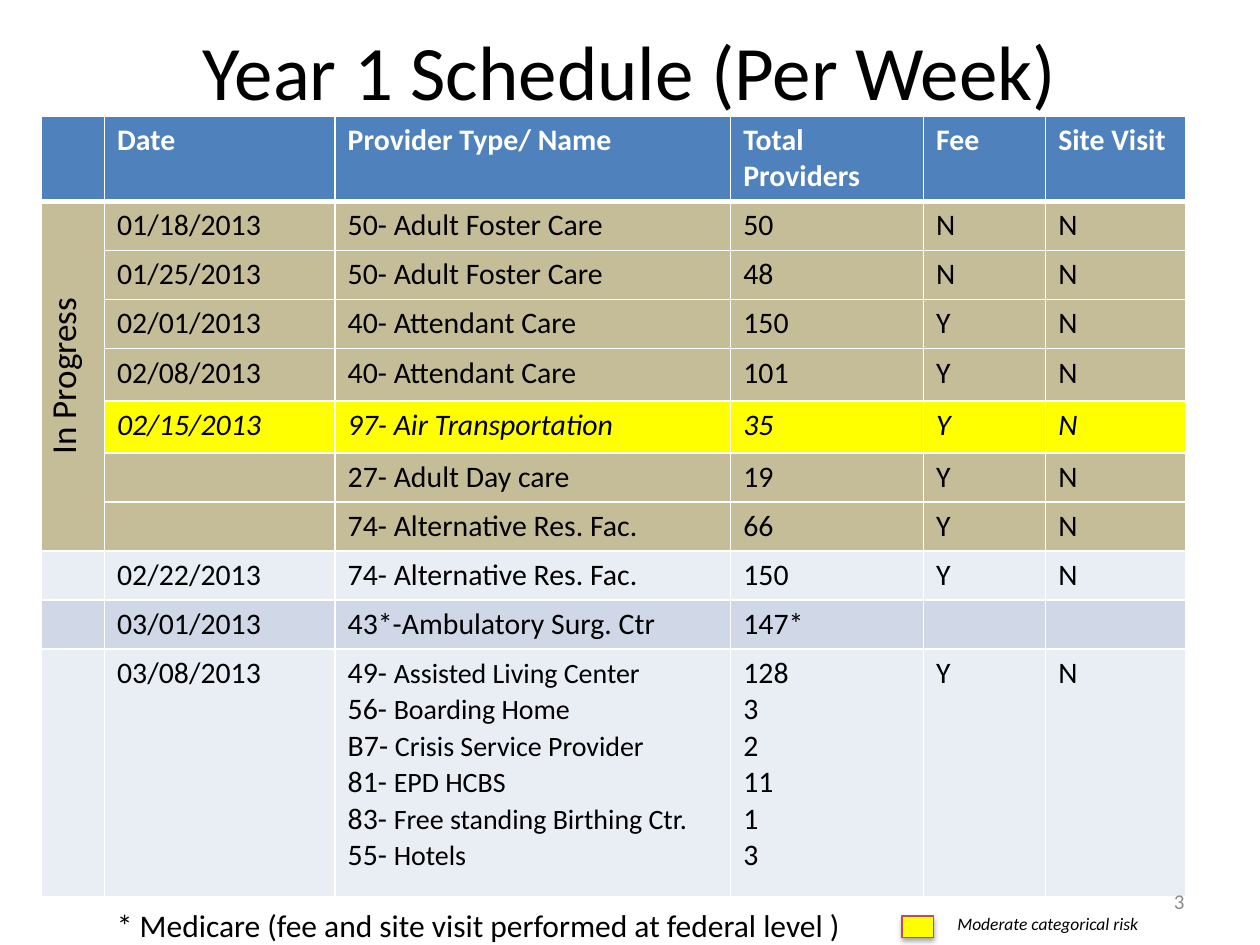
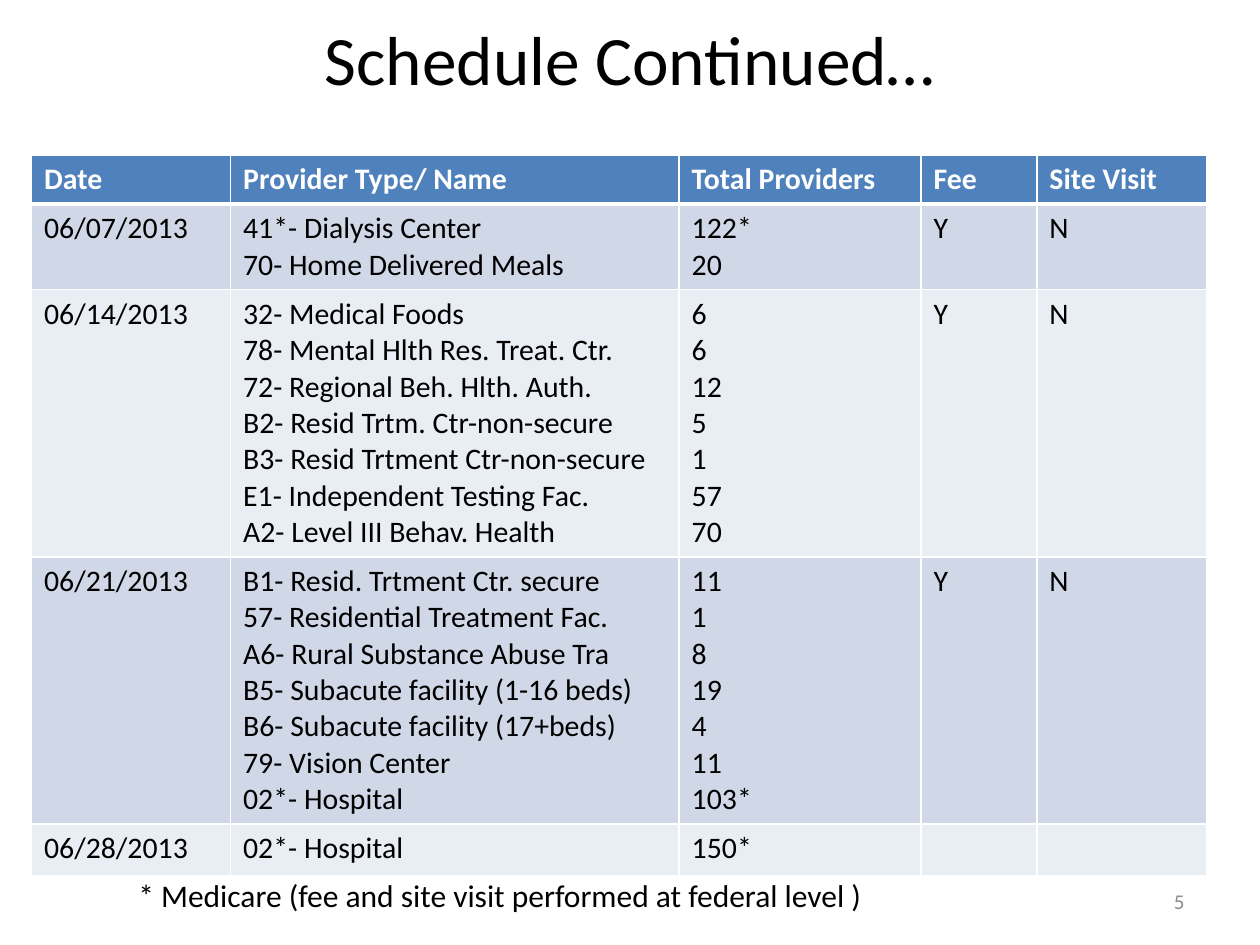
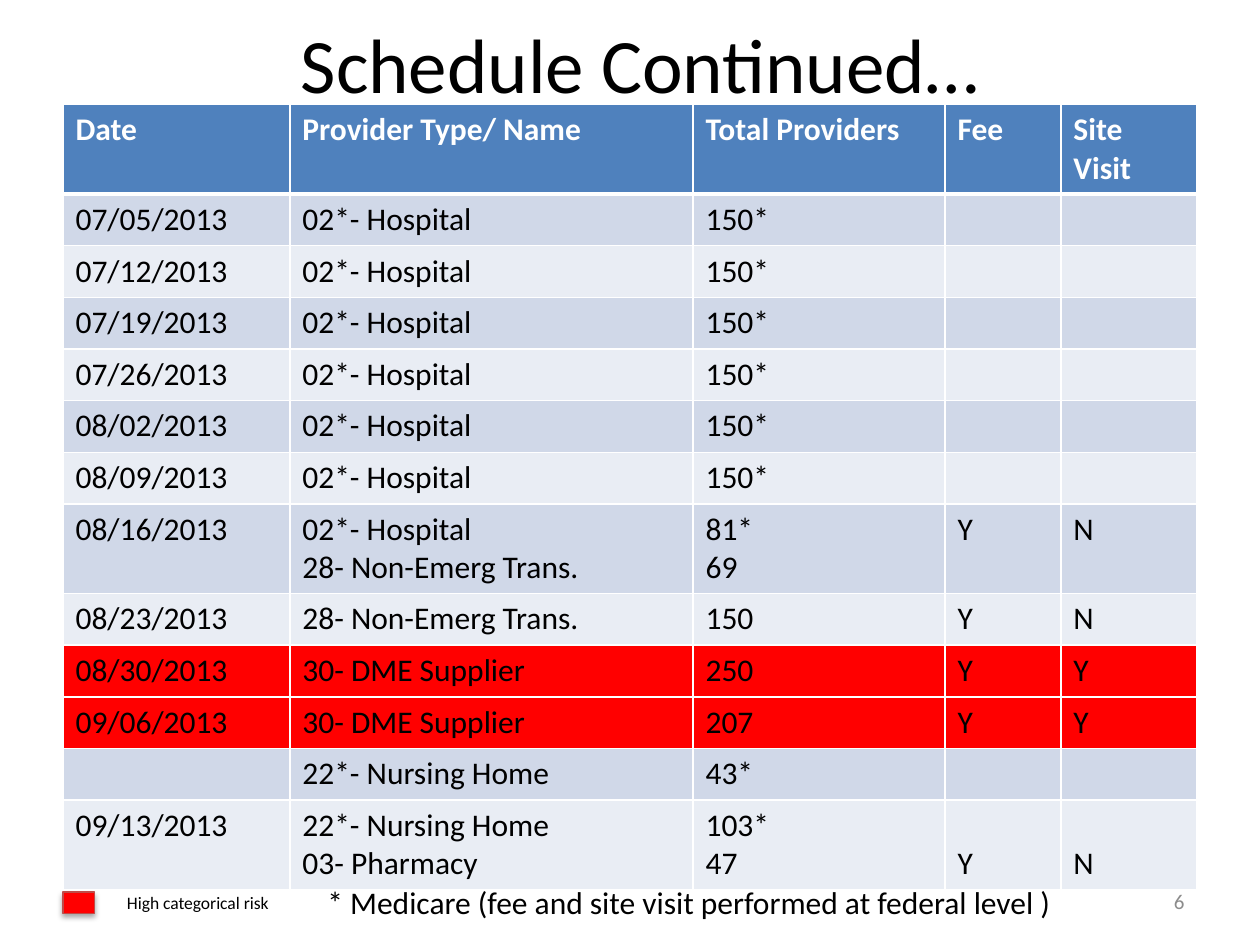
from dataclasses import dataclass
from typing import Any, Optional

from lxml import etree
from pptx import Presentation
from pptx.dml.color import RGBColor
from pptx.enum.shapes import MSO_SHAPE
from pptx.enum.text import MSO_ANCHOR, MSO_AUTO_SIZE, PP_ALIGN
from pptx.oxml.ns import qn
from pptx.util import Inches, Pt

RECTANGLE = MSO_SHAPE.RECTANGLE
TOP, MIDDLE, BOTTOM = MSO_ANCHOR.TOP, MSO_ANCHOR.MIDDLE, MSO_ANCHOR.BOTTOM
LEFT, CENTER, RIGHT = PP_ALIGN.LEFT, PP_ALIGN.CENTER, PP_ALIGN.RIGHT
NO_FIT, GROW = MSO_AUTO_SIZE.NONE, MSO_AUTO_SIZE.SHAPE_TO_FIT_TEXT

WHITE = RGBColor(0xFF, 0xFF, 0xFF)
BLACK = RGBColor(0x00, 0x00, 0x00)
GRAY = RGBColor(0x8C, 0x8C, 0x8C)
HEADER_BLUE = RGBColor(0x4F, 0x81, 0xBD)
BAND_DARK = RGBColor(0xD0, 0xD8, 0xE8)
BAND_LIGHT = RGBColor(0xE9, 0xED, 0xF4)
IN_PROGRESS_TAN = RGBColor(0xC4, 0xBD, 0x97)
MODERATE_YELLOW = RGBColor(0xFF, 0xFF, 0x00)
HIGH_RED = RGBColor(0xFF, 0x00, 0x00)
LEGEND_OUTLINE = RGBColor(0xBF, 0x4C, 0x48)

FONT = "Calibri"
TITLE_ONLY = 5
HEADINGS = ("Date", "Provider Type/ Name", "Total Providers", "Fee", "Site Visit")
FOOTNOTE = "* Medicare (fee and site visit performed at federal level )"
NUMBER_BOX = (7.17, 6.95, 2.33, 0.4)

Box = tuple[float, float, float, float]


@dataclass(frozen=True)
class Row:
    height: float
    date: str
    providers: str
    totals: str
    fee: str = ""
    visit: str = ""
    fill: Optional[RGBColor] = None
    italic: bool = False
    name_size: Optional[float] = None
    flags_anchor: Any = TOP


@dataclass(frozen=True)
class Legend:
    swatch: Box
    caption_box: Box
    caption: str
    color: RGBColor
    italic: bool = False


@dataclass(frozen=True)
class Schedule:
    title: str
    title_box: Box
    title_size: float
    left: float
    top: float
    columns: tuple[float, ...]
    header_height: float
    text_size: float
    rows: tuple[Row, ...]
    footnote_box: Box
    number: str
    legend: Optional[Legend] = None
    status: str = ""
    status_rows: int = 0


def hospital(date: str, total: str = "150*", height: float = 0.41) -> Row:
    return Row(height, date, "02*- Hospital", total)


SCHEDULES = (
    Schedule(
        title="Year 1 Schedule (Per Week)",
        title_box=(0.5, 0.08, 9, 0.95),
        title_size=44,
        left=0.33,
        top=0.92,
        columns=(0.5, 1.83, 3.14, 1.53, 0.97, 1.11),
        header_height=0.67,
        text_size=17,
        rows=(
            Row(0.38, "01/18/2013", "50- Adult Foster Care", "50", "N", "N", IN_PROGRESS_TAN),
            Row(0.38, "01/25/2013", "50- Adult Foster Care", "48", "N", "N", IN_PROGRESS_TAN),
            Row(0.38, "02/01/2013", "40- Attendant Care", "150", "Y", "N", IN_PROGRESS_TAN),
            Row(0.42, "02/08/2013", "40- Attendant Care", "101", "Y", "N", IN_PROGRESS_TAN),
            Row(0.41, "02/15/2013", "97- Air Transportation", "35", "Y", "N",
                MODERATE_YELLOW, italic=True),
            Row(0.38, "", "27- Adult Day care", "19", "Y", "N", IN_PROGRESS_TAN),
            Row(0.38, "", "74- Alternative Res. Fac.", "66", "Y", "N", IN_PROGRESS_TAN),
            Row(0.38, "02/22/2013", "74- Alternative Res. Fac.", "150", "Y", "N"),
            Row(0.38, "03/01/2013", "43*-Ambulatory Surg. Ctr", "147*"),
            Row(1.97, "03/08/2013",
                "49- Assisted Living Center\n56- Boarding Home\n"
                "B7- Crisis Service Provider\n81- EPD HCBS\n"
                "83- Free standing Birthing Ctr.\n55- Hotels",
                "128\n3\n2\n11\n1\n3", "Y", "N", name_size=16),
        ),
        footnote_box=(0.83, 7.14, 6.33, 0.4),
        number="3",
        legend=Legend((7.16, 7.27, 0.25, 0.17), (7.5, 7.2, 1.75, 0.27),
                      "Moderate categorical risk", MODERATE_YELLOW, italic=True),
        status="In Progress",
        status_rows=7,
    ),
    Schedule(
        title="Schedule Continued…",
        title_box=(0.5, 0.08, 9, 0.75),
        title_size=39.6,
        left=0.25,
        top=1.23,
        columns=(1.58, 3.56, 1.92, 0.92, 1.35),
        header_height=0.38,
        text_size=17,
        rows=(
            Row(0.68, "06/07/2013", "41*- Dialysis Center\n70- Home Delivered Meals",
                "122*\n20", "Y", "N"),
            Row(2.12, "06/14/2013",
                "32- Medical Foods\n78- Mental Hlth Res. Treat. Ctr.\n"
                "72- Regional Beh. Hlth. Auth.\nB2- Resid Trtm. Ctr-non-secure\n"
                "B3- Resid Trtment Ctr-non-secure\nE1- Independent Testing Fac.\n"
                "A2- Level III Behav. Health",
                "6\n6\n12\n5\n1\n57\n70", "Y", "N"),
            Row(2.12, "06/21/2013",
                "B1- Resid. Trtment Ctr. secure\n57- Residential Treatment Fac.\n"
                "A6- Rural Substance Abuse Tra\nB5- Subacute facility (1-16 beds)\n"
                "B6- Subacute facility (17+beds)\n79- Vision Center\n02*- Hospital",
                "11\n1\n8\n19\n4\n11\n103*", "Y", "N"),
            hospital("06/28/2013"),
        ),
        footnote_box=(1, 6.9, 6.83, 0.4),
        number="5",
    ),
    Schedule(
        title="Schedule Continued…",
        title_box=(0.58, 0, 9, 1),
        title_size=44,
        left=0.5,
        top=0.83,
        columns=(1.8, 3.2, 2, 0.92, 1.08),
        header_height=0.7,
        text_size=18,
        rows=(
            *(hospital(date) for date in ("07/05/2013", "07/12/2013", "07/19/2013",
                                          "07/26/2013", "08/02/2013", "08/09/2013")),
            Row(0.7, "08/16/2013", "02*- Hospital\n28- Non-Emerg Trans.",
                "81*\n69", "Y", "N"),
            Row(0.41, "08/23/2013", "28- Non-Emerg Trans.", "150", "Y", "N"),
            Row(0.41, "08/30/2013", "30- DME Supplier", "250", "Y", "Y", HIGH_RED),
            Row(0.41, "09/06/2013", "30- DME Supplier", "207", "Y", "Y", HIGH_RED),
            Row(0.41, "", "22*- Nursing Home", "43*"),
            Row(0.7, "09/13/2013", "22*- Nursing Home\n03- Pharmacy", "103*\n47",
                "Y", "N", flags_anchor=BOTTOM),
        ),
        footnote_box=(2.5, 6.96, 6.08, 0.4),
        number="6",
        legend=Legend((0.5, 7.08, 0.25, 0.17), (0.91, 7.03, 1.84, 0.27),
                      "High categorical risk", HIGH_RED),
    ),
)


def apply_format(target: Any, values: dict[str, Any]) -> None:
    for name, value in values.items():
        setattr(target, name, value)


def add_run(paragraph: Any, text: str, size: float, color: RGBColor,
            bold: bool = False, italic: bool = False) -> None:
    run = paragraph.add_run()
    run.text = text
    apply_format(run.font, {"name": FONT, "size": Pt(size), "bold": bold, "italic": italic})
    run.font.color.rgb = color


def add_label(slide: Any, box: Box, text: str, size: float, color: RGBColor = BLACK,
              italic: bool = False, align: Any = LEFT, anchor: Any = TOP,
              fit: Any = GROW) -> None:
    frame = slide.shapes.add_textbox(*map(Inches, box)).text_frame
    apply_format(frame, {"word_wrap": True, "auto_size": fit, "vertical_anchor": anchor})
    paragraph = frame.paragraphs[0]
    paragraph.alignment = align
    add_run(paragraph, text, size, color, italic=italic)


def set_title(slide: Any, schedule: Schedule) -> None:
    title = slide.shapes.title
    lengths = map(Inches, schedule.title_box)
    apply_format(title, dict(zip(("left", "top", "width", "height"), lengths)))
    apply_format(title.text_frame,
                 {"word_wrap": True, "auto_size": NO_FIT, "vertical_anchor": MIDDLE})
    paragraph = title.text_frame.paragraphs[0]
    paragraph.alignment = CENTER
    add_run(paragraph, schedule.title, schedule.title_size, BLACK)


def style_cell(cell: Any, fill: RGBColor, top: float = 1, bottom: float = 1) -> None:
    properties = cell._tc.get_or_add_tcPr()
    for tag, width in (("a:lnL", 1), ("a:lnR", 1), ("a:lnT", top), ("a:lnB", bottom)):
        line = etree.SubElement(properties, qn(tag), w=str(Pt(width)))
        solid = etree.SubElement(line, qn("a:solidFill"))
        etree.SubElement(solid, qn("a:srgbClr"), val=str(WHITE))
    cell.fill.solid()
    cell.fill.fore_color.rgb = fill


def write_cell(cell: Any, text: str, size: float, color: RGBColor = BLACK,
               bold: bool = False, italic: bool = False,
               name_size: Optional[float] = None) -> None:
    frame = cell.text_frame
    for index, line in enumerate(text.split("\n")):
        paragraph = frame.add_paragraph() if index else frame.paragraphs[0]
        if not line:
            paragraph._p.get_or_add_endParaRPr().set("sz", str(int(size * 100)))
        elif name_size:
            code, dash, name = line.partition("- ")
            add_run(paragraph, code + dash, size, color, bold, italic)
            add_run(paragraph, name, name_size, color, bold, italic)
        else:
            add_run(paragraph, line, size, color, bold, italic)


def add_status(table: Any, schedule: Schedule) -> None:
    cell = table.cell(1, 0)
    cell.merge(table.cell(schedule.status_rows, 0))
    margin = Inches(0.01)
    apply_format(cell, {"vertical_anchor": BOTTOM, "margin_left": margin,
                        "margin_right": margin, "margin_top": margin, "margin_bottom": 0})
    cell._tc.get_or_add_tcPr().set("vert", "vert270")
    paragraph = cell.text_frame.paragraphs[0]
    paragraph.alignment = CENTER
    add_run(paragraph, schedule.status, 20, BLACK)


def add_schedule_table(slide: Any, schedule: Schedule) -> None:
    heights = [schedule.header_height, *(row.height for row in schedule.rows)]
    table = slide.shapes.add_table(
        len(heights), len(schedule.columns), Inches(schedule.left), Inches(schedule.top),
        Inches(sum(schedule.columns)), Inches(sum(heights))).table
    for column, width in zip(table.columns, schedule.columns):
        column.width = Inches(width)
    for table_row, height in zip(table.rows, heights):
        table_row.height = Inches(height)

    size = schedule.text_size
    padding = ("",) * (len(schedule.columns) - len(HEADINGS))
    for column, heading in enumerate(padding + HEADINGS):
        cell = table.cell(0, column)
        style_cell(cell, HEADER_BLUE, bottom=3)
        write_cell(cell, heading, size, WHITE, bold=True)

    for index, row in enumerate(schedule.rows, start=1):
        band = row.fill or (BAND_DARK if index % 2 else BAND_LIGHT)
        texts = padding + (row.date, row.providers, row.totals, row.fee, row.visit)
        for column, text in enumerate(texts):
            cell = table.cell(index, column)
            in_status = column < len(padding) and index <= schedule.status_rows
            style_cell(cell, IN_PROGRESS_TAN if in_status else band,
                       top=3 if index == 1 else 1)
            if in_status:
                continue
            name_size = row.name_size if column == len(padding) + 1 else None
            write_cell(cell, text, size, italic=row.italic, name_size=name_size)
            if column >= len(texts) - 2:
                cell.vertical_anchor = row.flags_anchor
    if schedule.status:
        add_status(table, schedule)


def add_legend(slide: Any, legend: Legend) -> None:
    swatch = slide.shapes.add_shape(RECTANGLE, *map(Inches, legend.swatch))
    swatch.fill.solid()
    swatch.fill.fore_color.rgb = legend.color
    swatch.line.color.rgb = LEGEND_OUTLINE
    swatch.line.width = Pt(0.75)
    swatch.shadow.inherit = False
    effects = swatch._element.spPr.find(qn("a:effectLst"))
    shadow = etree.SubElement(effects, qn("a:outerShdw"), blurRad=str(Pt(3.1)),
                              dist=str(Pt(1.8)), dir="5400000", rotWithShape="0")
    color = etree.SubElement(shadow, qn("a:srgbClr"), val=str(BLACK))
    etree.SubElement(color, qn("a:alpha"), val="35000")
    add_label(slide, legend.caption_box, legend.caption, 10, italic=legend.italic)


def add_schedule_slide(presentation: Any, schedule: Schedule) -> None:
    slide = presentation.slides.add_slide(presentation.slide_layouts[TITLE_ONLY])
    set_title(slide, schedule)
    add_schedule_table(slide, schedule)
    add_label(slide, schedule.footnote_box, FOOTNOTE, 18)
    if schedule.legend:
        add_legend(slide, schedule.legend)
    add_label(slide, NUMBER_BOX, schedule.number, 12, GRAY,
              align=RIGHT, anchor=MIDDLE, fit=NO_FIT)


def main() -> None:
    presentation = Presentation()
    presentation.slide_width = Inches(10)
    presentation.slide_height = Inches(7.5)
    for schedule in SCHEDULES:
        add_schedule_slide(presentation, schedule)
    presentation.save("out.pptx")


if __name__ == "__main__":
    main()
